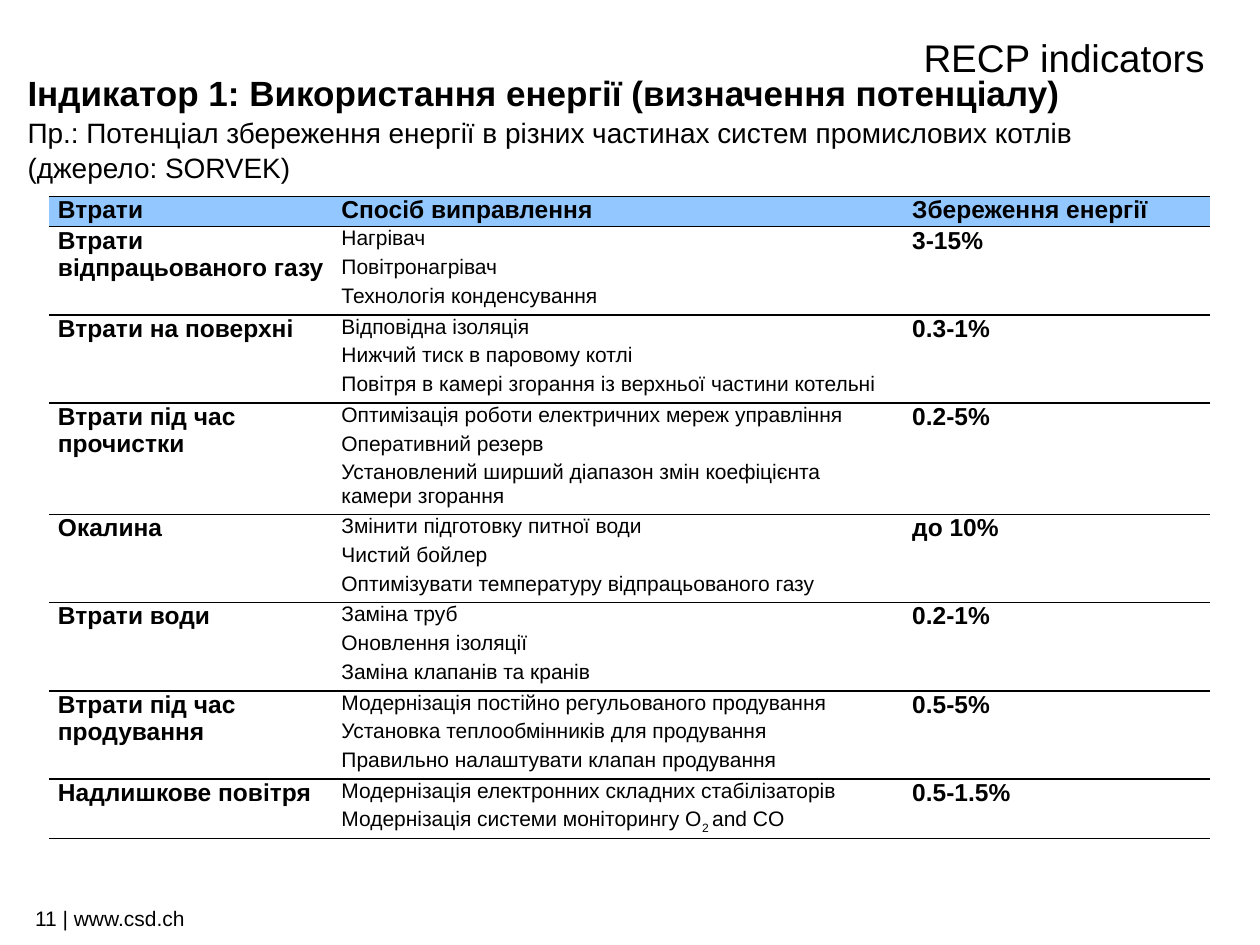
from dataclasses import dataclass

from lxml import etree
from pptx import Presentation
from pptx.dml.color import RGBColor
from pptx.enum.text import MSO_ANCHOR, PP_ALIGN
from pptx.oxml.ns import qn
from pptx.util import Inches, Pt

TOP, MIDDLE = MSO_ANCHOR.TOP, MSO_ANCHOR.MIDDLE
LEFT, RIGHT = PP_ALIGN.LEFT, PP_ALIGN.RIGHT
UNIT = Inches(0.1)
PLAIN = "{2D5ABB26-0587-4C30-8999-92F81FD0307C}"


@dataclass(frozen=True)
class Theme:
    """Hold the colours, font and type sizes."""
    font: str = "Arial"
    ink: str = "000000"
    band: str = "92C8FF"
    title: int = 22
    head: int = 20
    sub: int = 16
    cell: int = 14
    small: int = 12
    gap: int = 3
    rule: int = 1


THEME = Theme()
COLS = (22.5, 45.3, 24.3)
ROWS = (2.4, *[7] * 6, 4.5)
HEAD = ("Втрати", "Спосіб виправлення", "Збереження енергії")
LOSSES = (
    ("Втрати відпрацьованого газу",
     "Нагрівач\nПовітронагрівач\nТехнологія конденсування", "3-15%"),
    ("Втрати на поверхні",
     "Відповідна ізоляція\nНижчий тиск в паровому котлі\n"
     "Повітря в камері згорання із верхньої частини котельні", "0.3-1%"),
    ("Втрати під час прочистки",
     "Оптимізація роботи електричних мереж управління\nОперативний резерв\n"
     "Установлений ширший діапазон змін коефіцієнта камери згорання", "0.2-5%"),
    ("Окалина",
     "Змінити підготовку питної води\nЧистий бойлер\n"
     "Оптимізувати температуру відпрацьованого газу", "до 10%"),
    ("Втрати води",
     "Заміна труб\nОновлення ізоляції\nЗаміна клапанів та кранів", "0.2-1%"),
    ("Втрати під час продування",
     "Модернізація постійно регульованого продування\n"
     "Установка теплообмінників для продування\n"
     "Правильно налаштувати клапан продування", "0.5-5%"),
    ("Надлишкове повітря",
     "Модернізація електронних складних стабілізаторів\n"
     "Модернізація системи моніторингу O", "0.5-1.5%"),
)


def grid(*cells):
    """Turn grid columns and rows into slide lengths."""
    return [round(cell * UNIT) for cell in cells]


def style(para, size, bold=False, align=LEFT, before=0):
    """Format a paragraph and its runs."""
    para.alignment = align
    para.space_before = Pt(before)
    for run in para.runs:
        font = run.font
        font.name, font.size, font.bold = THEME.font, Pt(size), bold
        font.color.rgb = RGBColor.from_string(THEME.ink)


def label(slide, box, lines, align=LEFT, anchor=TOP):
    """Place a text box whose lines are text, size and weight."""
    frame = slide.shapes.add_textbox(*grid(*box)).text_frame
    frame.word_wrap = True
    frame.vertical_anchor = anchor
    frame.text = "\n".join(text for text, _, _ in lines)
    for spot, (para, line) in enumerate(zip(frame.paragraphs, lines)):
        style(para, *line[1:], align, before=1 if spot else 0)


def border(cell):
    """Rule the top and bottom of a cell and leave its sides open."""
    props = cell._tc.get_or_add_tcPr()
    for side in ("a:lnL", "a:lnR", "a:lnT", "a:lnB"):
        line = etree.SubElement(props, qn(side), w=str(Pt(THEME.rule)))
        if side in ("a:lnL", "a:lnR"):
            etree.SubElement(line, qn("a:noFill"))
        else:
            fill = etree.SubElement(line, qn("a:solidFill"))
            etree.SubElement(fill, qn("a:srgbClr"), val=THEME.ink)


def fill_cell(cell, text, size, bold, band):
    """Set the text, margins, rules and fill of a cell."""
    cell.margin_left = cell.margin_right = Inches(0.07)
    cell.margin_top = cell.margin_bottom = 0
    border(cell)
    if band:
        cell.fill.solid()
        cell.fill.fore_color.rgb = RGBColor.from_string(THEME.band)
    else:
        cell.fill.background()
    cell.text_frame.text = text
    for spot, para in enumerate(cell.text_frame.paragraphs):
        style(para, size, bold, before=THEME.gap if spot else 0)


def add_gases(cell):
    """Finish the last line of a cell with its subscript and gas name."""
    para = cell.text_frame.paragraphs[-1]
    low, rest = para.add_run(), para.add_run()
    low.text, rest.text = "2 ", "and CO"
    style(para, THEME.small, before=THEME.gap)
    low.font._element.set("baseline", "-25000")


def losses(slide, box):
    """Build the table of losses, remedies and savings in its box."""
    data = (HEAD, *LOSSES)
    shape = slide.shapes.add_table(len(data), len(HEAD), *grid(*box))
    table = shape.table
    table.first_row = table.horz_banding = False
    table._tbl.tblPr.find(qn("a:tableStyleId")).text = PLAIN
    for col, width in zip(table.columns, COLS):
        col.width = round(box[2] * width / sum(COLS) * UNIT)
    for row, height in zip(table.rows, ROWS):
        row.height = round(height * UNIT)
    for r, texts in enumerate(data):
        for c, text in enumerate(texts):
            remedy = r > 0 and c == 1
            size = THEME.small if remedy else THEME.cell
            fill_cell(table.cell(r, c), text, size, not remedy, r == 0)
    add_gases(table.cell(len(LOSSES), 1))


def main():
    """Build the slide and save it."""
    deck = Presentation()
    deck.slide_width, deck.slide_height = grid(100, 75)
    slide = deck.slides.add_slide(deck.slide_layouts[6])
    label(slide, (1.8, 71.4, 68.6, 2.8),
          [("11 | www.csd.ch", THEME.small, False)])
    label(slide, (11.3, 1.8, 85.3, 5.4),
          [("RECP indicators", THEME.title, False)], RIGHT, MIDDLE)
    label(slide, (1.2, 5.2, 98.8, 54.3), [
        ("Індикатор 1: Використання енергії (визначення потенціалу)",
         THEME.head, True),
        ("Пр.: Потенціал збереження енергії в різних частинах систем "
         "промислових котлів", THEME.sub, False),
        ("(джерело: SORVEK)", THEME.sub, False),
    ])
    losses(slide, (3.9, 15.6, 92.1, 50.6))
    deck.save("out.pptx")


if __name__ == "__main__":
    main()
